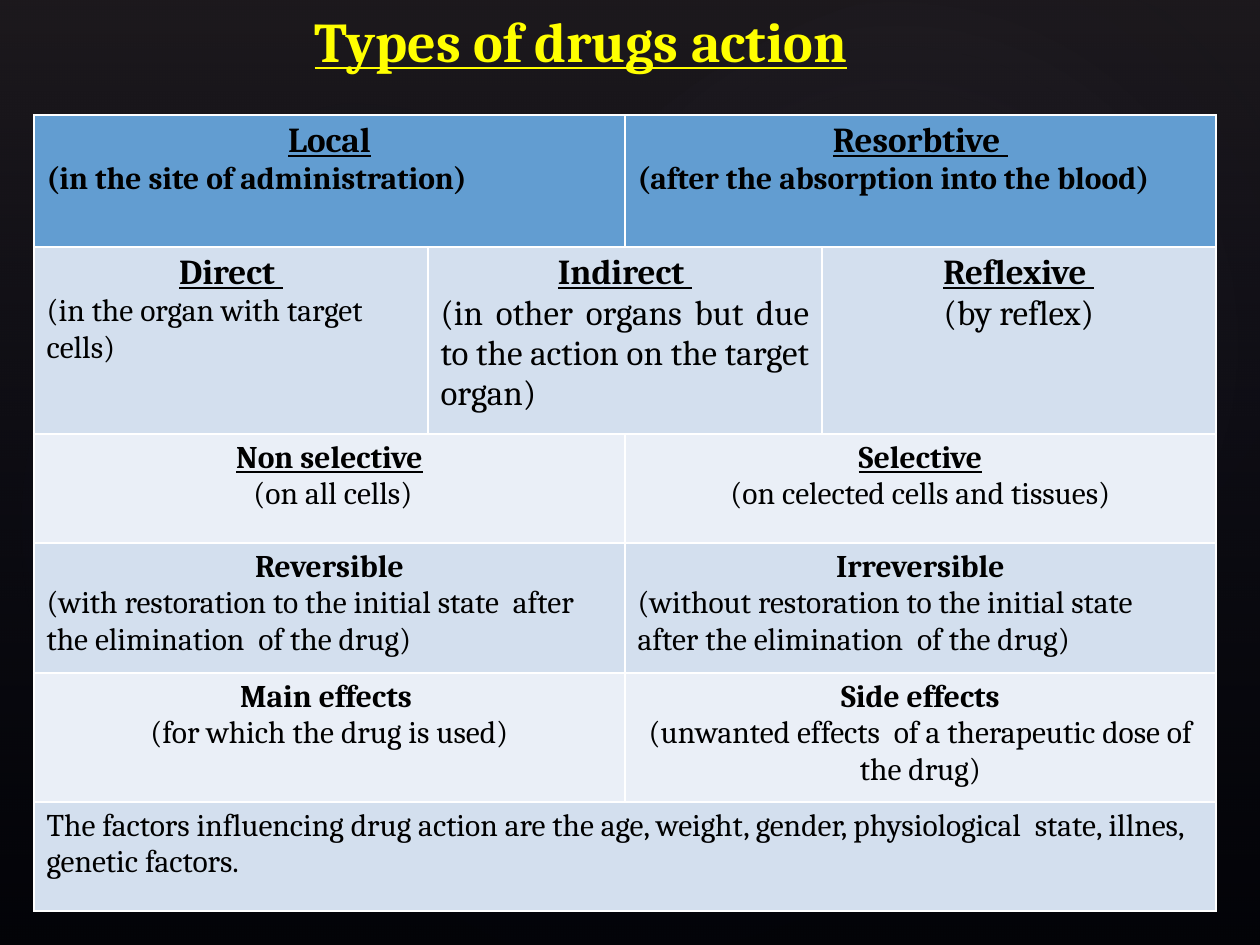
from lxml import etree
from pptx import Presentation
from pptx.dml.color import RGBColor
from pptx.enum.shapes import MSO_SHAPE
from pptx.enum.text import MSO_ANCHOR, MSO_AUTO_SIZE, PP_ALIGN
from pptx.oxml.ns import qn
from pptx.util import Pt

PX = 914400 // 126
LEFT, CENTER, JUSTIFY = PP_ALIGN.LEFT, PP_ALIGN.CENTER, PP_ALIGN.JUSTIFY
RECT, OVAL = MSO_SHAPE.RECTANGLE, MSO_SHAPE.OVAL
FONT = "Cambria"
HEAD, BAND, PALE = "629DD1", "D3DFEE", "EAEFF7"


def rgb(value):
    return RGBColor.from_string(value)


def glow(sp, stops, radial):
    """Fill a shape with a gradient of (position, colour, opacity) stops."""
    sp.shadow.inherit = False
    sp.line.fill.background()
    sp.fill.gradient()
    grad = sp.fill._xPr.find(qn("a:gradFill"))
    for child in list(grad):
        grad.remove(child)
    gs_list = etree.SubElement(grad, qn("a:gsLst"))
    for pos, color, opacity in stops:
        gs = etree.SubElement(gs_list, qn("a:gs"), pos=str(pos * 1000))
        clr = etree.SubElement(gs, qn("a:srgbClr"), val=color)
        etree.SubElement(clr, qn("a:alpha"), val=str(opacity * 1000))
    if radial:
        circle = etree.SubElement(grad, qn("a:path"), path="circle")
        etree.SubElement(circle, qn("a:fillToRect"), l="50000", t="50000", r="50000", b="50000")
    else:
        etree.SubElement(grad, qn("a:lin"), ang="5400000", scaled="0")


prs = Presentation()
prs.slide_width, prs.slide_height = 1260 * PX, 945 * PX
s = prs.slides.add_slide(prs.slide_layouts[5])
title = s.shapes.title

# Dark background with soft glows, kept behind the title
s.background.fill.solid()
s.background.fill.fore_color.rgb = rgb("000000")
backdrop = [
    (RECT, 0, 0, 1260, 945, 0, [(0, "504652", 36), (100, "242852", 10)]),
    (OVAL, 189, 144, 998, 786, 328.7, [(0, "C4BCC6", 7), (58, "242852", 0)]),
    (OVAL, -38, 161, 764, 617, 294.3, [(0, "C4BCC6", 8), (58, "242852", 0)]),
    (OVAL, 451, 16, 893, 655, 328.7, [(0, "C4BCC6", 8), (58, "242852", 0)]),
]
for kind, x, y, w, h, angle, stops in backdrop:
    sp = s.shapes.add_shape(kind, x * PX, y * PX, w * PX, h * PX)
    sp.rotation = angle
    glow(sp, stops, kind == OVAL)
    title._element.addprevious(sp._element)

# Title
title.left, title.top, title.width, title.height = 302 * PX, 0, 630 * PX, 81 * PX
tf = title.text_frame
tf.text = "Types of drugs action"
tf.auto_size = MSO_AUTO_SIZE.SHAPE_TO_FIT_TEXT
tf.vertical_anchor = MSO_ANCHOR.TOP
p = tf.paragraphs[0]
p.alignment = LEFT
p.font.name, p.font.size = FONT, Pt(32)
p.font.bold = p.font.underline = True
p.font.color.rgb = rgb("FFFF00")

# Table grid: two wide outer columns, two half-width inner ones
col_widths = [394, 197, 197, 394]
row_heights = [132, 187, 109, 130, 129, 109]
row_fills = [HEAD, BAND, PALE, BAND, PALE, BAND]
table = s.shapes.add_table(6, 4, 34 * PX, 115 * PX, sum(col_widths) * PX,
                           sum(row_heights) * PX).table
for column, width in zip(table.columns, col_widths):
    column.width = width * PX
for row, height, fill in zip(table.rows, row_heights, row_fills):
    row.height = height * PX
    for cell in row.cells:
        cell.fill.solid()
        cell.fill.fore_color.rgb = rgb(fill)

# Cells: row, first column, last column, heading, its size, note, its size, note alignment
cells = [
    (0, 0, 1, "Local", 20, "(in the site of administration)", 18, LEFT),
    (0, 2, 3, "Resorbtive ", 20, "(after the absorption into the blood)", 18, LEFT),
    (1, 0, 0, "Direct ", 20, "(in the organ with target cells)", 18, LEFT),
    (1, 1, 2, "Indirect ", 20,
     "(in other organs but due to the action on the target organ)", 20, JUSTIFY),
    (1, 3, 3, "Reflexive ", 20, "(by reflex)", 20, CENTER),
    (2, 0, 1, "Non selective", 18, " (on all cells)", 18, CENTER),
    (2, 2, 3, "Selective", 18, "(on celected cells and tissues)", 18, CENTER),
    (3, 0, 1, "Reversible", 18,
     "(with restoration to the initial state  after the elimination  of the drug)", 18, LEFT),
    (3, 2, 3, "Irreversible", 18,
     "(without restoration to the initial state  after the elimination  of the drug)", 18, LEFT),
    (4, 0, 1, "Main effects ", 18, "(for which the drug is used)", 18, CENTER),
    (4, 2, 3, "Side effects", 18,
     "(unwanted effects  of a therapeutic dose of the drug)", 18, CENTER),
    (5, 0, 3, "", 18, "The factors influencing drug action are the age, weight, gender, "
     "physiological  state, illnes, genetic factors.", 18, LEFT),
]
for row, first, last, heading, head_size, note, note_size, align in cells:
    cell = table.cell(row, first)
    if last > first:
        cell.merge(table.cell(row, last))
    tf = cell.text_frame
    tf.text = f"{heading}\n{note}" if heading else note
    for p in tf.paragraphs:
        is_heading = p.text == heading
        p.alignment = CENTER if is_heading else align
        p.font.name = FONT
        p.font.size = Pt(head_size if is_heading else note_size)
        p.font.bold = is_heading or row == 0
        p.font.underline = is_heading and row < 3
        p.font.color.rgb = rgb("000000")

prs.save("out.pptx")
